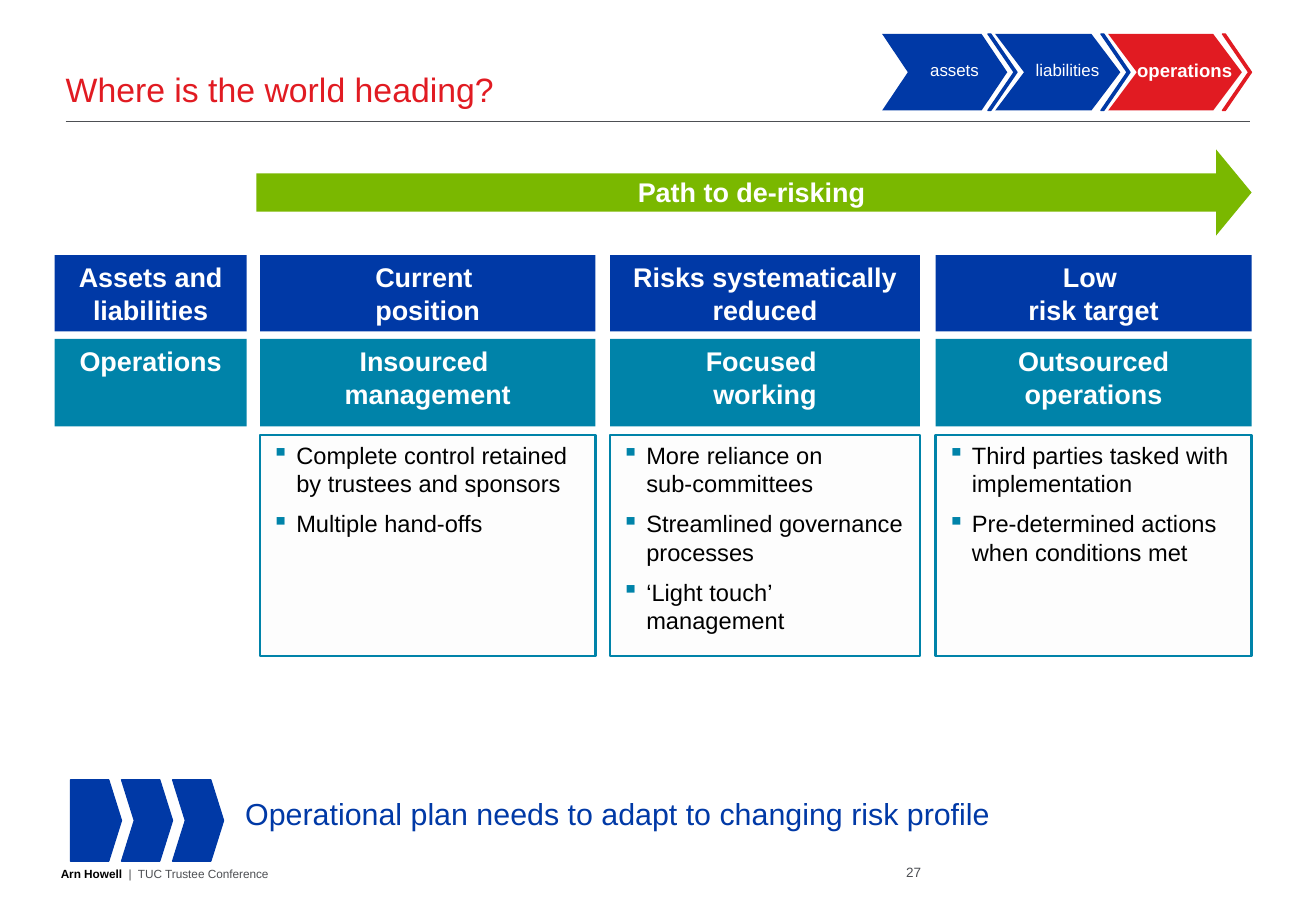
from dataclasses import dataclass
from lxml import etree
from pptx import Presentation
from pptx.dml.color import RGBColor as Rgb
from pptx.enum import shapes as sh, text as tx
from pptx.oxml.ns import qn
from pptx.util import Inches, Pt


@dataclass
class Theme:
    blue: str = "0039A6"
    teal: str = "0083A9"
    red: str = "E11B22"
    green: str = "7AB800"
    grey: str = "4D4F53"
    pale: str = "FDFDFD"
    white: str = "FFFFFF"
    black: str = "000000"
    font: str = "Arial"
    title: float = 20
    note: float = 18
    head: float = 16
    body: float = 14
    step: float = 10
    page: float = 8
    foot: float = 7


T = Theme()
Kind = sh.MSO_SHAPE
Mid = tx.PP_ALIGN.CENTER
Left = tx.PP_ALIGN.LEFT
Top = tx.MSO_ANCHOR.TOP
Low = tx.MSO_ANCHOR.BOTTOM

deck = Presentation()
deck.slide_width, deck.slide_height = Inches(10.83), Inches(7.5)
slide = deck.slides.add_slide(deck.slide_layouts[5])
items = slide.shapes


def draw(kind, at, fill, line=None, width=0.75, adj=()):
    form = items.add_shape(kind, *map(Inches, at))
    form.shadow.inherit = False
    form.fill.solid()
    form.fill.fore_color.rgb = Rgb.from_string(fill)
    if line:
        form.line.color.rgb = Rgb.from_string(line)
        form.line.width = Pt(width)
    else:
        form.line.fill.background()
    for i, value in enumerate(adj):
        form.adjustments[i] = value
    return form


def write(form, lines, size, color, bold=False, align=Left, anchor=Top,
          inset=(0.1, 0.05), bullet=False):
    frame = form.text_frame
    frame.word_wrap = True
    frame.auto_size = tx.MSO_AUTO_SIZE.NONE
    frame.vertical_anchor = anchor
    frame.margin_left = frame.margin_right = Inches(inset[0])
    frame.margin_top = frame.margin_bottom = Inches(inset[1])
    for i, line in enumerate(lines):
        para = frame.add_paragraph() if i else frame.paragraphs[0]
        para.text = line
        para.alignment = align
        para.space_before = Pt(size / 2 if i else 0)
        if bullet:
            props = para._p.get_or_add_pPr()
            props.set("marL", str(Inches(0.2)))
            props.set("indent", str(-Inches(0.2)))
            tint = etree.SubElement(props, qn("a:buClr"))
            etree.SubElement(tint, qn("a:srgbClr"), val=T.teal)
            etree.SubElement(props, qn("a:buChar"), char="▪")
        para.font.name = T.font
        para.font.size = Pt(size)
        para.font.bold = bold
        para.font.color.rgb = Rgb.from_string(color)
    return frame


# Title and rule
title = items.title
title.left, title.top, title.width, title.height = map(Inches, (0.54, 0.33, 9.75, 0.57))
write(title, ["Where is the world heading?"], T.title, T.red, anchor=Low, inset=(0, 0))
rule = items.add_connector(sh.MSO_CONNECTOR.STRAIGHT, *map(Inches, (0.54, 1, 10.29, 1)))
rule.line.color.rgb = Rgb.from_string(T.grey)
rule.line.width = Pt(0.75)
etree.SubElement(rule._element.spPr, qn("a:effectLst"))

# Step tracker, drawn from right to left
steps = [
    ("operations", 9.12, 1.1, 0.374, T.red, (9.2, 1.1), 10.06),
    ("liabilities", 8.19, 1.03, 0.377, T.blue, (8.35, 0.87), 9.06),
    ("assets", 7.26, 1.03, 0.336, T.blue, (7.42, 0.87), 8.13),
]
for name, left, wide, adj, color, (start, span), edge in steps:
    draw(Kind.CHEVRON, (left, 0.28, wide, 0.63), color, adj=[adj])
for name, left, wide, adj, color, (start, span), edge in steps:
    now = color == T.red
    label = items.add_textbox(*map(Inches, (start, 0.44, span, 0.28)))
    write(label, [name], T.step + now, T.white, bold=now, align=Mid)
    draw(Kind.CHEVRON, (edge, 0.28, 0.24, 0.63), color, color, adj=[0.897])

# Path arrow
draw(Kind.RIGHT_ARROW, (2.11, 1.23, 8.19, 0.71), T.green, adj=[0.446, 0.412])
label = items.add_textbox(*map(Inches, (2.07, 1.4, 8.23, 0.37)))
write(label, ["Path to de-risking"], T.head, T.white, bold=True, align=Mid)

# Grid: row labels, then three stages
columns = [
    (0.45, 1.58, "Assets and liabilities", "Operations", []),
    (2.14, 2.76, "Current \vposition", "Insourced \vmanagement",
     ["Complete control retained by trustees and sponsors", "Multiple hand-offs"]),
    (5.02, 2.55, "Risks systematically\vreduced", "Focused \vworking",
     ["More reliance on \vsub-committees", "Streamlined governance processes",
      "‘Light touch’ \vmanagement"]),
    (7.7, 2.6, "Low \vrisk target", "Outsourced operations",
     ["Third parties tasked with implementation",
      "Pre-determined actions when conditions met"]),
]
for left, wide, upper, lower, points in columns:
    for words, top, high, color in ((upper, 2.1, 0.63, T.blue), (lower, 2.79, 0.72, T.teal)):
        cell = draw(Kind.RECTANGLE, (left, top, wide, high), color)
        write(cell, [words], T.head, T.white, bold=True, align=Mid)
    if points:
        panel = draw(Kind.RECTANGLE, (left, 3.58, wide, 1.82), T.pale, T.teal, 1.5)
        write(panel, points, T.body, T.black, bullet=True)

# Closing message
for i in range(3):
    kind = Kind.CHEVRON if i else Kind.PENTAGON
    draw(kind, (0.58 + 0.42 * i, 6.42, 0.42, 0.67), T.blue, T.blue, adj=[0.25])
note = items.add_textbox(*map(Inches, (1.92, 6.5, 8.5, 0.4)))
write(note, ["Operational plan needs to adapt to changing risk profile"], T.note, T.blue)

# Footer
foot = items.add_textbox(*map(Inches, (0.5, 6.92, 4.98, 0.33)))
frame = write(foot, ["Arn Howell"], T.foot, T.black, anchor=Low, inset=(0, 0))
para = frame.paragraphs[0]
para.runs[0].font.bold = True
rest = para.add_run()
rest.text = "  |  TUC Trustee Conference"
rest.font.color.rgb = Rgb.from_string(T.grey)
page = items.add_textbox(*map(Inches, (7.23, 6.92, 0.35, 0.33)))
write(page, ["27"], T.page, T.grey, align=tx.PP_ALIGN.RIGHT, anchor=Low, inset=(0, 0))

deck.save("out.pptx")
